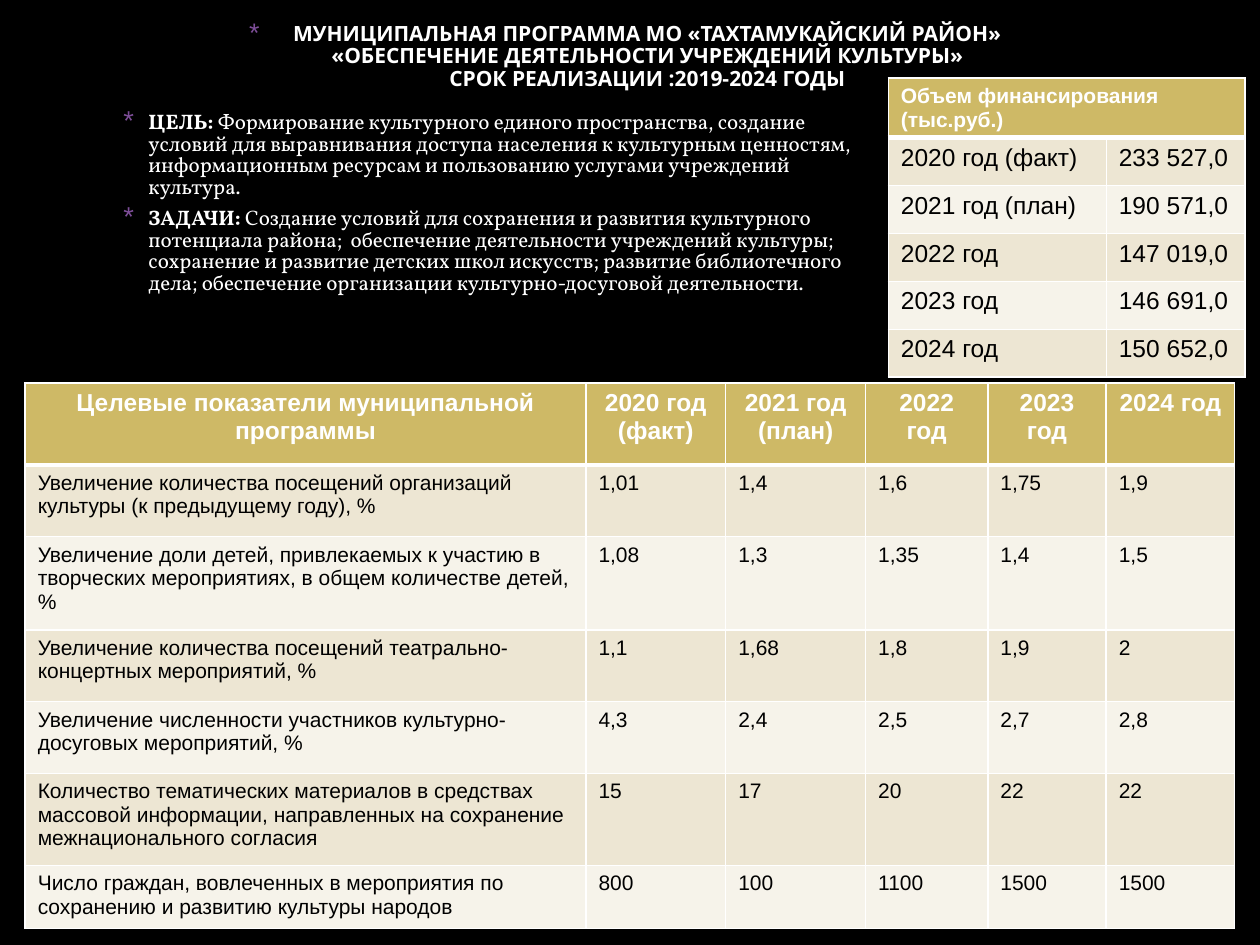
from dataclasses import dataclass

from lxml import etree
from pptx import Presentation
from pptx.dml.color import RGBColor
from pptx.enum.text import MSO_ANCHOR, MSO_AUTO_SIZE, PP_ALIGN
from pptx.oxml.ns import qn
from pptx.util import Inches, Pt

CENTER, LEFT = PP_ALIGN.CENTER, PP_ALIGN.LEFT
TOP = MSO_ANCHOR.TOP
NO_AUTOFIT = MSO_AUTO_SIZE.NONE


@dataclass(frozen=True)
class Theme:
    """Colours, fonts and type sizes of the slide."""
    background: str = "000000"
    light: str = "FFFFFF"
    dark: str = "000000"
    header: str = "CEB966"
    bands: tuple = ("EDE6D3", "F6F3EA")
    bullet: str = "7E4E99"
    title_font: str = "Open Sans"
    body_font: str = "Vollkorn"
    table_font: str = "Arial"
    small: int = 12
    large: int = 14


THEME = Theme()

TITLE = "\v".join([
    "МУНИЦИПАЛЬНАЯ ПРОГРАММА МО «ТАХТАМУКАЙСКИЙ РАЙОН»",
    "«ОБЕСПЕЧЕНИЕ ДЕЯТЕЛЬНОСТИ УЧРЕЖДЕНИЙ КУЛЬТУРЫ»",
    "СРОК РЕАЛИЗАЦИИ :2019-2024 ГОДЫ",
])
GOALS = [
    ("ЦЕЛЬ: ", "Формирование культурного единого пространства, создание условий для "
     "выравнивания доступа населения к культурным ценностям, информационным ресурсам "
     "и пользованию услугами учреждений культура."),
    ("ЗАДАЧИ: ", "Создание условий для сохранения и развития культурного потенциала "
     "района;  обеспечение деятельности учреждений культуры;  сохранение и развитие "
     "детских школ искусств; развитие библиотечного дела; обеспечение организации "
     "культурно-досуговой деятельности."),
]
FINANCE = [
    ("Объем финансирования (тыс.руб.)", ""),
    ("2020 год (факт)", "233 527,0"),
    ("2021 год (план)", "190 571,0"),
    ("2022 год", "147 019,0"),
    ("2023 год", "146 691,0"),
    ("2024 год", "150 652,0"),
]
INDICATORS = [
    ("Целевые показатели муниципальной программы", "2020 год (факт)",
     "2021 год (план)", "2022 год", "2023 год", "2024 год"),
    ("Увеличение количества посещений организаций культуры (к предыдущему году), %",
     "1,01", "1,4", "1,6", "1,75", "1,9"),
    ("Увеличение доли детей, привлекаемых к участию в творческих мероприятиях, "
     "в общем количестве детей, %", "1,08", "1,3", "1,35", "1,4", "1,5"),
    ("Увеличение количества посещений театрально-концертных мероприятий, %",
     "1,1", "1,68", "1,8", "1,9", "2"),
    ("Увеличение численности участников культурно-досуговых мероприятий, %",
     "4,3", "2,4", "2,5", "2,7", "2,8"),
    ("Количество тематических материалов в средствах массовой информации, "
     "направленных на сохранение межнационального согласия",
     "15", "17", "20", "22", "22"),
    ("Число граждан, вовлеченных в мероприятия по сохранению и развитию культуры "
     "народов", "800", "100", "1100", "1500", "1500"),
]


def style_font(font, name, size, color, bold):
    """Give a font its face, size, colour and weight."""
    font.name, font.size, font.bold = name, Pt(size), bold
    font.color.rgb = RGBColor.from_string(color)


def add_bullet(paragraph, margin, hanging, percent):
    """Give a paragraph a hanging asterisk."""
    properties = paragraph._p.get_or_add_pPr()
    properties.set("marL", str(Inches(margin)))
    properties.set("indent", str(-Inches(hanging)))
    color = etree.SubElement(properties, qn("a:buClr"))
    etree.SubElement(color, qn("a:srgbClr"), val=THEME.bullet)
    etree.SubElement(properties, qn("a:buSzPct"), val=str(percent * 1000))
    etree.SubElement(properties, qn("a:buFont"), typeface=THEME.table_font)
    etree.SubElement(properties, qn("a:buChar"), char="*")


def set_borders(cell, top, bottom):
    """Draw the four sides of a cell in the light colour."""
    properties = cell._tc.get_or_add_tcPr()
    for side, width in (("L", 1), ("R", 1), ("T", top), ("B", bottom)):
        line = etree.SubElement(properties, qn(f"a:ln{side}"), w=str(Pt(width)))
        fill = etree.SubElement(line, qn("a:solidFill"))
        etree.SubElement(fill, qn("a:srgbClr"), val=THEME.light)


def place_title(slide, box):
    """Put the programme's name in the title placeholder."""
    title = slide.shapes.title
    title.left, title.top, title.width, title.height = map(Inches, box)
    frame = title.text_frame
    frame.word_wrap, frame.auto_size = True, NO_AUTOFIT
    frame.vertical_anchor, frame.margin_top = TOP, Inches(0.06)
    frame.text = TITLE
    paragraph = frame.paragraphs[0]
    paragraph.alignment, paragraph.line_spacing = CENTER, 0.88
    add_bullet(paragraph, 0.35, 0.35, 128)
    style_font(paragraph.font, THEME.title_font, THEME.small, THEME.light, True)


def place_goals(slide, box):
    """Write the goal and the tasks as bulleted paragraphs."""
    frame = slide.shapes.add_textbox(*map(Inches, box)).text_frame
    frame.word_wrap = True
    for index, (label, statement) in enumerate(GOALS):
        paragraph = frame.add_paragraph() if index else frame.paragraphs[0]
        paragraph.line_spacing = 0.86
        paragraph.space_before, paragraph.space_after = Pt(2.4), Pt(3)
        add_bullet(paragraph, 0.25, 0.2, 130)
        style_font(paragraph.font, THEME.body_font, THEME.small, THEME.light, False)
        paragraph.add_run().text = label
        paragraph.runs[0].font.bold = True
        paragraph.add_run().text = statement


def place_table(slide, box, rows, columns, heights, sizes, header_align):
    """Place a banded table; columns and heights are in inches, sizes are header and body."""
    table = slide.shapes.add_table(len(rows), len(columns), *map(Inches, box)).table
    table.horz_banding = False
    for column, width in zip(table.columns, columns):
        column.width = Inches(width)
    for index, (row, height, texts) in enumerate(zip(table.rows, heights, rows)):
        row.height = Inches(height)
        is_header = index == 0
        fill = THEME.header if is_header else THEME.bands[(index - 1) % 2]
        for cell, text in zip(row.cells, texts):
            set_borders(cell, 3 if index == 1 else 1, 3 if is_header else 1)
            cell.fill.solid()
            cell.fill.fore_color.rgb = RGBColor.from_string(fill)
            cell.text = text
            paragraph = cell.text_frame.paragraphs[0]
            paragraph.alignment = header_align if is_header else LEFT
            style_font(paragraph.font, THEME.table_font, sizes[0 if is_header else 1],
                       THEME.light if is_header else THEME.dark, is_header)
    return table


def place_finance(slide, box):
    """Place the yearly funding under one merged header."""
    table = place_table(slide, box, FINANCE, (1.73, 1.1), [0.38] * len(FINANCE),
                        (THEME.small, THEME.large), LEFT)
    table.cell(0, 0).merge(table.cell(0, 1))


def place_indicators(slide, box):
    """Place the target indicators by year."""
    place_table(slide, box, INDICATORS, (4.45, 1.11, 1.11, 0.97, 0.94, 1.02),
                (0.65, 0.57, 0.74, 0.57, 0.57, 0.73, 0.42),
                (THEME.large, THEME.small), CENTER)


def main():
    """Build the programme slide and save it."""
    deck = Presentation()
    deck.slide_width, deck.slide_height = Inches(10), Inches(7.5)
    slide = deck.slides.add_slide(deck.slide_layouts[5])
    slide.background.fill.solid()
    slide.background.fill.fore_color.rgb = RGBColor.from_string(THEME.background)
    place_title(slide, (0.28, 0.13, 9.37, 0.94))
    place_finance(slide, (7.05, 0.62, 2.83, 2.28))
    place_goals(slide, (0.83, 0.84, 6.08, 1.91))
    place_indicators(slide, (0.2, 3.04, 9.61, 4.33))
    deck.save("out.pptx")


if __name__ == "__main__":
    main()
